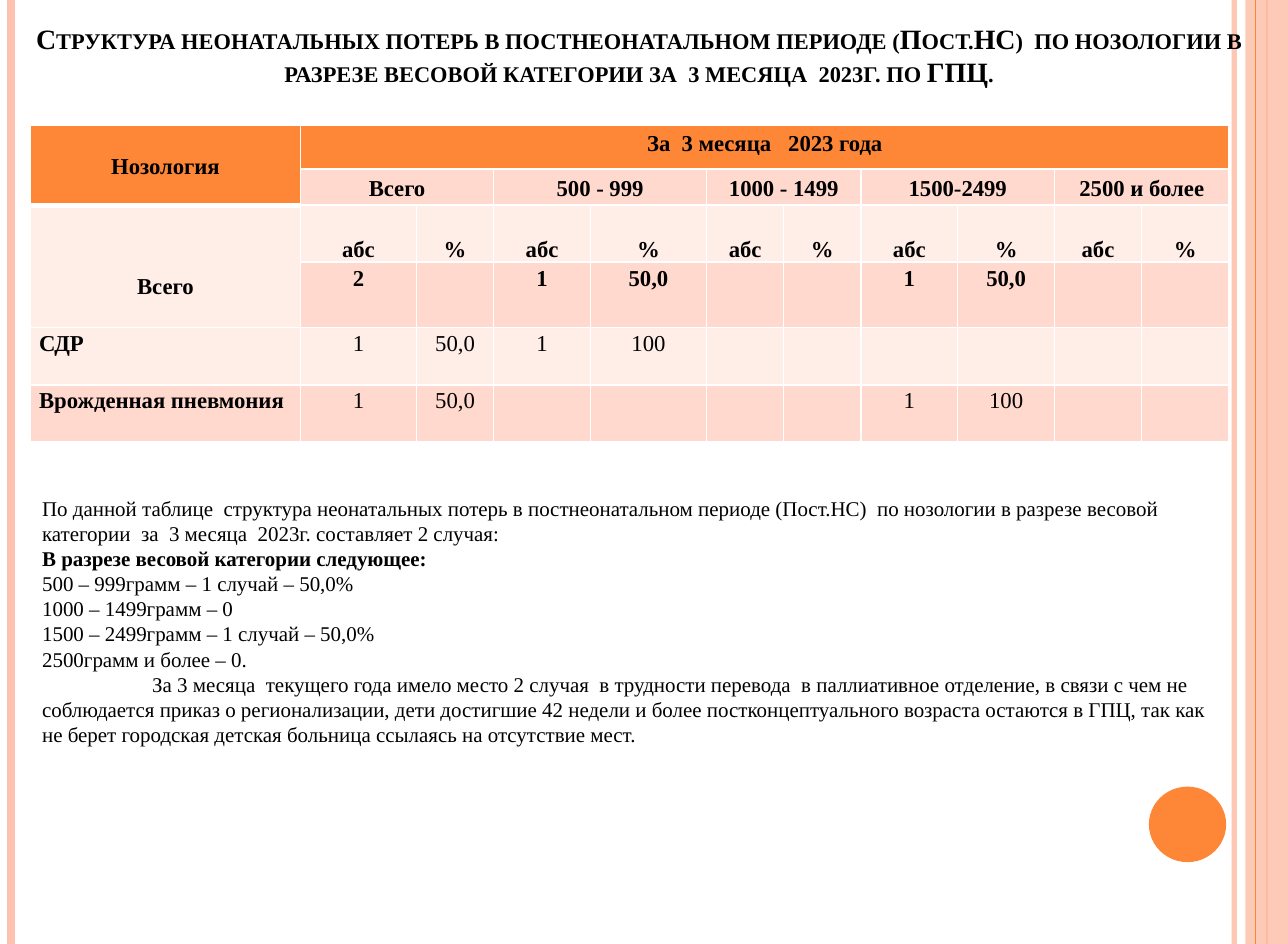
from lxml import etree
from pptx import Presentation
from pptx.dml.color import RGBColor
from pptx.enum import shapes, text
from pptx.oxml.ns import qn
from pptx.util import Pt

C = {"black": "000000", "white": "FFFFFF", "orange": "FE8637",
     "peach": "FEC3AE", "band": "FFD9CE", "pale": "FFEDE8"}
FONT = "Times New Roman"
W, H = 737, 540

TITLE = ("Структура неонатальных потерь в постнеонатальном периоде (Пост.НС)  по нозологии "
         "в разрезе весовой категории за  3 месяца  2023г. по ГПЦ.")
GROUPS = ["Всего", "500 - 999", "1000 - 1499", "1500-2499", "2500 и более"]
ROWS = [
    ["Нозология", "За  3 месяца   2023 года"] + [""] * 9,
    [""] + [t for g in GROUPS for t in (g, "")],
    ["Всего"] + ["абс", "%"] * 5,
    ["", "2", "", "1", "50,0", "", "", "1", "50,0", "", ""],
    ["СДР", "1", "50,0", "1", "100", "", "", "", "", "", ""],
    ["Врожденная пневмония", "1", "50,0", "", "", "", "", "1", "100", "", ""],
]
COL_W = [154.5, 66.4, 44.2, 55.4, 66.4, 44.2, 44.2, 55.4, 55.4, 49.8, 50]
ROW_H = [25.2, 20.6, 32.6, 37.4, 32.8, 32.5]
ROW_FILL = ["orange", "band", "pale", "band", "pale", "band"]
MERGES = [(0, 0, 1, 0), (0, 1, 0, 10), (2, 0, 3, 0)] + [(1, c, 1, c + 1) for c in range(1, 11, 2)]
BODY = [
    "По данной таблице  структура неонатальных потерь в постнеонатальном периоде (Пост.НС)  "
    "по нозологии в разрезе весовой категории  за  3 месяца  2023г. составляет 2 случая:",
    "В разрезе весовой категории следующее:",
    "500 – 999грамм – 1 случай – 50,0%",
    "1000 – 1499грамм – 0",
    "1500 – 2499грамм – 1 случай – 50,0%",
    "2500грамм и более – 0.",
    "За 3 месяца  текущего года имело место 2 случая  в трудности перевода  в паллиативное "
    "отделение, в связи с чем не соблюдается приказ о регионализации, дети достигшие 42 недели "
    "и более постконцептуального возраста остаются в ГПЦ, так как  не берет городская детская "
    "больница ссылаясь на отсутствие мест.",
]
BOLD_LINE, INDENTED_LINE = 1, 6


def rgb(name):
    return RGBColor.from_string(C[name])


def style(p, size, bold):
    for r in p.runs:
        r.font.name, r.font.size, r.font.bold = FONT, Pt(size), bold
        r.font.color.rgb = rgb("black")


def set_alpha(sp, percent):
    color = next(sp._element.spPr.iter(qn("a:srgbClr")))
    etree.SubElement(color, qn("a:alpha")).set("val", str(percent * 1000))


def rule(s, x, color, width):
    ln = s.shapes.add_connector(shapes.MSO_CONNECTOR.STRAIGHT, Pt(x), Pt(0), Pt(x), Pt(H))
    ln.line.color.rgb, ln.line.width = rgb(color), Pt(width)
    etree.SubElement(ln._element.spPr, qn("a:effectLst"))
    return ln


def block(s, kind, x, y, w, h, color):
    sp = s.shapes.add_shape(kind, Pt(x), Pt(y), Pt(w), Pt(h))
    sp.shadow.inherit = False
    sp.fill.solid()
    sp.fill.fore_color.rgb = rgb(color)
    sp.line.fill.background()
    return sp


def add_decor(s):
    set_alpha(rule(s, 706.3, "peach", 3), 93)
    rule(s, 6.3, "peach", 4.5)
    rule(s, 725, "orange", 1.5)
    set_alpha(block(s, shapes.MSO_SHAPE.RECTANGLE, 712.6, 0, W - 712.6, H, "peach"), 87)
    rule(s, 718.6, "orange", 0.75)
    block(s, shapes.MSO_SHAPE.OVAL, 657.4, 450, 44.2, 43.2, "orange")


def add_title(s):
    sp = s.shapes.title
    sp.left, sp.top, sp.width, sp.height = Pt(11.4), Pt(0), Pt(708.5), Pt(54.2)
    tf = sp.text_frame
    tf.text = TITLE
    tf.word_wrap, tf.auto_size = True, text.MSO_AUTO_SIZE.NONE
    tf.vertical_anchor = text.MSO_ANCHOR.BOTTOM
    p = tf.paragraphs[0]
    p.alignment = text.PP_ALIGN.CENTER
    style(p, 16, True)
    p.runs[0].font._element.set("cap", "small")
    s.shapes._spTree.append(sp._element)


def set_borders(cell, bottom):
    for side, width in (("L", 1), ("R", 1), ("T", 1), ("B", bottom)):
        ln = etree.SubElement(cell._tc.get_or_add_tcPr(), qn("a:ln" + side), w=str(Pt(width)))
        fill = etree.SubElement(ln, qn("a:solidFill"))
        etree.SubElement(fill, qn("a:srgbClr"), val=C["white"])


def format_cell(cell, i, j):
    name_column = j == 0
    set_borders(cell, 3 if name_column and i < 2 else 1)
    cell.fill.solid()
    cell.fill.fore_color.rgb = rgb("orange" if name_column and i < 2 else ROW_FILL[i])
    cell.margin_left = cell.margin_right = Pt(5)
    period = i == 0 and not name_column
    cell.margin_top = cell.margin_bottom = Pt(3.6 if period else 0)
    if i == 2:
        cell.vertical_anchor = text.MSO_ANCHOR.BOTTOM
        cell.margin_bottom = Pt(16 if name_column else 0)
    elif i == 1 or (i == 0 and name_column):
        cell.vertical_anchor = text.MSO_ANCHOR.MIDDLE
    p = cell.text_frame.paragraphs[0]
    p.alignment = text.PP_ALIGN.LEFT if name_column and i > 3 else text.PP_ALIGN.CENTER
    if not period:
        p.line_spacing = 1.15
    style(p, 13, name_column or i < 4)
    if not p.runs:
        etree.SubElement(p._p, qn("a:endParaRPr"), sz="1300")


def add_losses_table(s):
    frame = s.shapes.add_table(len(ROWS), len(COL_W), Pt(17.4), Pt(71.6),
                               Pt(sum(COL_W)), Pt(sum(ROW_H)))
    tbl = frame.table
    tbl.first_row = tbl.horz_banding = False
    for col, w in zip(tbl.columns, COL_W):
        col.width = Pt(w)
    for row, h in zip(tbl.rows, ROW_H):
        row.height = Pt(h)
    for i, values in enumerate(ROWS):
        for j, value in enumerate(values):
            cell = tbl.cell(i, j)
            cell.text = value
            format_cell(cell, i, j)
    for top, left, bottom, right in MERGES:
        tbl.cell(top, left).merge(tbl.cell(bottom, right))


def add_body(s):
    tf = s.shapes.add_textbox(Pt(17), Pt(278.2), Pt(697.7), Pt(181.4)).text_frame
    tf.word_wrap = True
    tf.margin_top = Pt(5)
    tf.text = "\n".join(BODY)
    for i, p in enumerate(tf.paragraphs):
        style(p, 12, i == BOLD_LINE)
    tf.paragraphs[INDENTED_LINE]._p.get_or_add_pPr().set("indent", str(Pt(63)))


def main():
    prs = Presentation()
    prs.slide_width, prs.slide_height = Pt(W), Pt(H)
    s = prs.slides.add_slide(prs.slide_layouts[5])
    add_decor(s)
    add_title(s)
    add_losses_table(s)
    add_body(s)
    prs.save("out.pptx")


if __name__ == "__main__":
    main()
